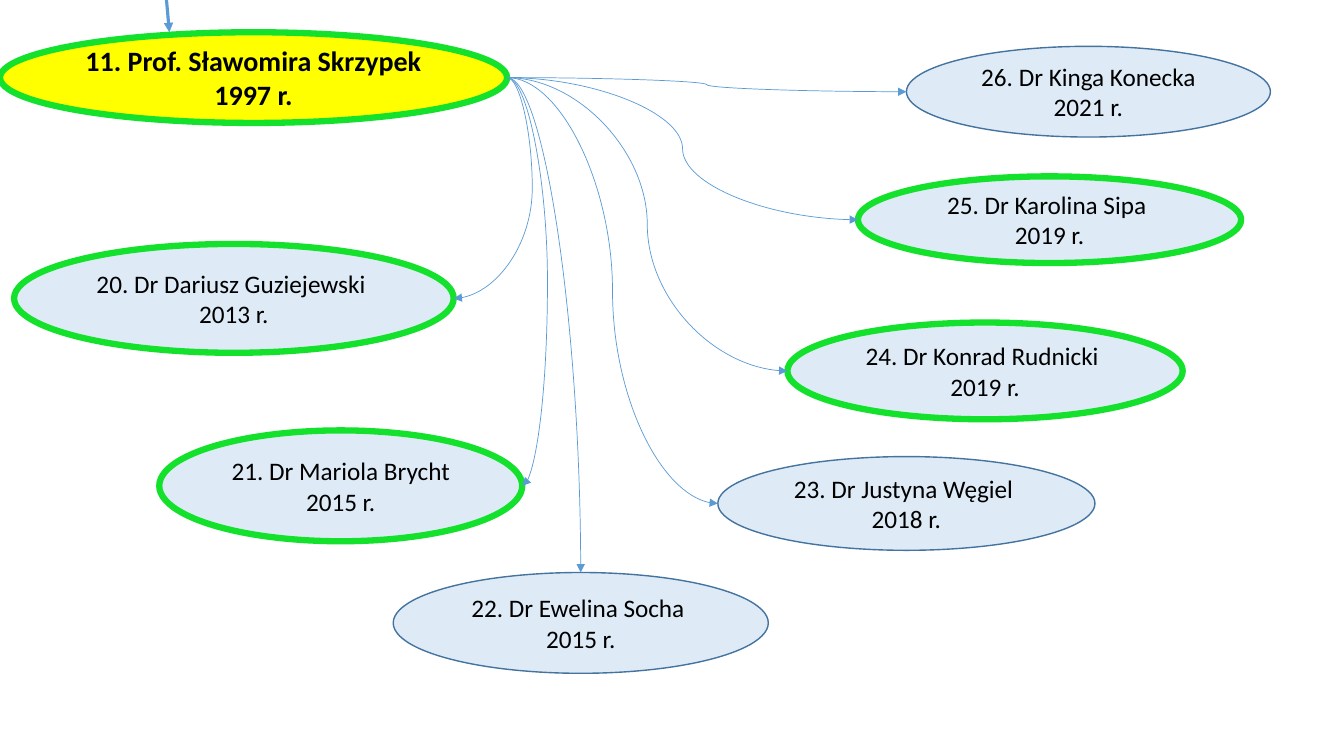
import pptx
import pptx.dml.color
import pptx.enum.shapes
import pptx.enum.text
import pptx.oxml.ns
import pptx.util
import lxml.etree

YELLOW = pptx.dml.color.RGBColor(0xFF, 0xFF, 0x00)
PALE_BLUE = pptx.dml.color.RGBColor(0xDE, 0xEB, 0xF7)
GREEN = pptx.dml.color.RGBColor(0x13, 0xE1, 0x2C)
DARK_BLUE = pptx.dml.color.RGBColor(0x43, 0x73, 0x9E)
ARROW_BLUE = pptx.dml.color.RGBColor(0x5B, 0x9B, 0xD5)
BLACK = pptx.dml.color.RGBColor(0x00, 0x00, 0x00)


def add_person(name, year, box, fill, green_rim, size, bold):
    """Draw an ellipse at box (left, top, width, height) with a name above a year."""
    person = slide.shapes.add_shape(
        pptx.enum.shapes.MSO_SHAPE.OVAL,
        *[pptx.util.Inches(length) for length in box])
    person.shadow.inherit = False
    person.fill.solid()
    person.fill.fore_color.rgb = fill
    person.line.color.rgb = GREEN if green_rim else DARK_BLUE
    person.line.width = pptx.util.Pt(4.5 if green_rim else 1)

    label = person.text_frame
    label.word_wrap = True
    label.vertical_anchor = pptx.enum.text.MSO_ANCHOR.MIDDLE
    label.text = f"{name}\n{year}"
    for paragraph in label.paragraphs:
        paragraph.alignment = pptx.enum.text.PP_ALIGN.CENTER
        font = paragraph.runs[0].font
        font.name = "Calibri"
        font.size = pptx.util.Pt(size)
        font.bold = bold
        font.color.rgb = BLACK


def add_arrow(kind, start, end, width):
    arrow = slide.shapes.add_connector(
        kind, *[pptx.util.Inches(length) for length in (*start, *end)])
    arrow.line.color.rgb = ARROW_BLUE
    arrow.line.width = pptx.util.Pt(width)
    properties = arrow._element.spPr
    outline = properties.find(pptx.oxml.ns.qn("a:ln"))
    lxml.etree.SubElement(outline, pptx.oxml.ns.qn("a:tailEnd"), type="triangle")
    lxml.etree.SubElement(properties, pptx.oxml.ns.qn("a:effectLst"))
    return arrow


presentation = pptx.Presentation()
presentation.slide_width = pptx.util.Inches(13.33)
presentation.slide_height = pptx.util.Inches(7.5)
blank_layout = presentation.slide_layouts[6]
slide = presentation.slides.add_slide(blank_layout)

# The supervisor, reached by an arrow from above the slide
add_person("11. Prof. Sławomira Skrzypek ", "1997 r.", (0, 0.32, 5.03, 0.9),
           YELLOW, green_rim=True, size=20, bold=True)
add_arrow(pptx.enum.shapes.MSO_CONNECTOR.STRAIGHT, (1.64, -0.13), (1.68, 0.32), 2.25)

# The doctoral students: name, year, box, green rim, side where the arrow arrives
students = [
    ("26. Dr Kinga Konecka", "2021 r.", (8.99, 0.46, 3.61, 0.9), False, "left"),
    ("25. Dr Karolina Sipa ", "2019 r.", (8.51, 1.75, 3.8, 0.86), True, "left"),
    ("24. Dr Konrad Rudnicki ", "2019 r.", (7.81, 3.2, 3.92, 0.96), True, "left"),
    ("23. Dr Justyna Węgiel ", "2018 r.", (7.12, 4.53, 3.74, 0.93), False, "left"),
    ("22. Dr Ewelina Socha ", "2015 r.", (3.9, 5.68, 3.72, 1), False, "top"),
    ("21. Dr Mariola Brycht", "2015 r.", (1.58, 4.27, 3.6, 1.1), True, "right"),
    ("20. Dr Dariusz Guziejewski ", "2013 r.", (0.14, 2.42, 4.36, 1.08), True, "right"),
]
branching_point = (5.03, 0.77)
clearance = 0.25  # how far a curve bulges past the right-hand side it turns back to

for name, year, box, green_rim, side in students:
    add_person(name, year, box, PALE_BLUE, green_rim, size=18, bold=False)

    left, top, width, height = box
    side_middles = {
        "left": (left, top + height / 2),
        "top": (left + width / 2, top),
        "right": (left + width, top + height / 2),
    }
    arrow_end = side_middles[side]
    arrow = add_arrow(pptx.enum.shapes.MSO_CONNECTOR.CURVE,
                      branching_point, arrow_end, 0.5)

    geometry = arrow._element.spPr.find(pptx.oxml.ns.qn("a:prstGeom"))
    if side == "top":
        geometry.set("prst", "curvedConnector2")
    elif side == "right":
        # The bend is a share of the run, counted from the start in 1/100000
        run = arrow_end[0] - branching_point[0]
        bulge = max(run, 0) + clearance
        adjustments = geometry.find(pptx.oxml.ns.qn("a:avLst"))
        lxml.etree.SubElement(adjustments, pptx.oxml.ns.qn("a:gd"), name="adj1",
                              fmla=f"val {round(bulge / run * 100000)}")

presentation.save("out.pptx")
